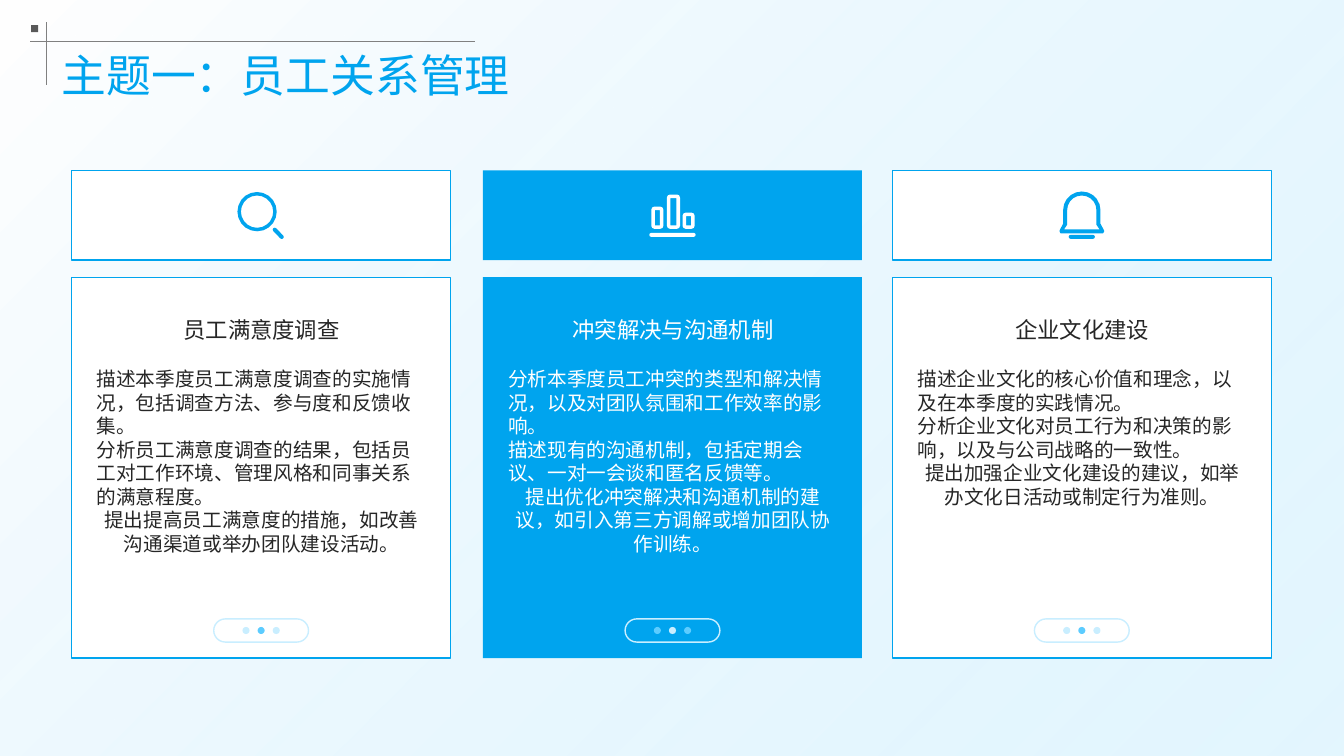
from math import cos, pi, radians, sin

from lxml.etree import SubElement
from pptx import Presentation
from pptx.dml.color import RGBColor
from pptx.enum.shapes import MSO_CONNECTOR, MSO_SHAPE
from pptx.enum.text import MSO_ANCHOR, PP_ALIGN
from pptx.oxml.ns import qn
from pptx.util import Inches, Pt

# Content
TITLE = "主题一：员工关系管理"
TOPICS = [
    {"left": 0.71, "icon": "search", "solid": False, "heading": "员工满意度调查", "points": [
        "描述本季度员工满意度调查的实施情况，包括调查方法、参与度和反馈收集。",
        "分析员工满意度调查的结果，包括员工对工作环境、管理风格和同事关系的满意程度。",
        "提出提高员工满意度的措施，如改善沟通渠道或举办团队建设活动。"]},
    {"left": 4.79, "icon": "bars", "solid": True, "heading": "冲突解决与沟通机制", "points": [
        "分析本季度员工冲突的类型和解决情况，以及对团队氛围和工作效率的影响。",
        "描述现有的沟通机制，包括定期会议、一对一会谈和匿名反馈等。",
        "提出优化冲突解决和沟通机制的建议，如引入第三方调解或增加团队协作训练。"]},
    {"left": 8.85, "icon": "bell", "solid": False, "heading": "企业文化建设", "points": [
        "描述企业文化的核心价值和理念，以及在本季度的实践情况。",
        "分析企业文化对员工行为和决策的影响，以及与公司战略的一致性。",
        "提出加强企业文化建设的建议，如举办文化日活动或制定行为准则。"]},
]

# Style and grid, in inches
FONT = "Noto Sans CJK SC"
COLORS = {"blue": "00A4EE", "sky": "5CCCFF", "pale": "C9EEFF", "white": "FFFFFF",
          "ink": "262626", "rule": "808080", "square": "595959"}
SLIDE_W, SLIDE_H = 13.33, 7.5
CARD_W, PAD, TEXT_W = 3.76, 0.25, 3.27
HEAD_TOP, HEAD_H = 1.69, 0.89
BODY_TOP, BODY_H = 2.75, 3.78
PILL_TOP, PILL_W, PILL_H = 6.14, 0.94, 0.23
DOT, DOT_STEP = 0.07, 0.15

deck = Presentation()
deck.slide_width, deck.slide_height = Inches(SLIDE_W), Inches(SLIDE_H)
slide = deck.slides.add_slide(deck.slide_layouts[6])


def color(name):
    return RGBColor.from_string(COLORS[name])


def paint(shape, fill=None, line=None):
    shape.shadow.inherit = False
    if fill:
        shape.fill.solid()
        shape.fill.fore_color.rgb = color(fill)
    else:
        shape.fill.background()
    if line:
        shape.line.color.rgb = color(line)
        shape.line.width = Pt(1)
    else:
        shape.line.fill.background()


def add_block(kind, left, top, width, height, fill=None, line=None):
    block = slide.shapes.add_shape(kind, *map(Inches, (left, top, width, height)))
    paint(block, fill, line)
    return block


def add_text(paragraphs, left, top, width, height, size, ink,
             aligns=(PP_ALIGN.CENTER,), anchor=MSO_ANCHOR.MIDDLE):
    frame = slide.shapes.add_textbox(*map(Inches, (left, top, width, height))).text_frame
    frame.word_wrap = True
    frame.vertical_anchor = anchor
    frame.margin_left = frame.margin_top = frame.margin_right = frame.margin_bottom = 0
    for index, (words, align) in enumerate(zip(paragraphs, aligns)):
        paragraph = frame.add_paragraph() if index else frame.paragraphs[0]
        paragraph.alignment = align
        # Keep punctuation inside the right edge
        paragraph._p.get_or_add_pPr().set("hangingPunct", "0")
        run = paragraph.add_run()
        run.text = words
        run.font.size, run.font.name = Pt(size), FONT
        run.font.color.rgb = color(ink)
        SubElement(run.font._element, qn("a:ea"), typeface=FONT)


def add_rule(x1, y1, x2, y2):
    rule = slide.shapes.add_connector(MSO_CONNECTOR.STRAIGHT, *map(Inches, (x1, y1, x2, y2)))
    rule.line.color.rgb = color("rule")
    rule.line.width = Pt(0.5)
    SubElement(rule._element.spPr, qn("a:effectLst"))


# Icon outlines, measured from the icon's centre
def arc(cx, cy, radius, start, end, steps):
    angles = [radians(start + (end - start) * i / steps) for i in range(steps + 1)]
    return [(cx + radius * cos(a), cy + radius * sin(a)) for a in angles]


def rounded(cx, cy, width, height, radius, turn=0):
    dx, dy = width / 2 - radius, height / 2 - radius
    corners = [(dx, dy), (-dx, dy), (-dx, -dy), (dx, -dy)]
    if radius:
        steps = 5 if radius > 0.1 else 2
        corners = [p for i, (x, y) in enumerate(corners)
                   for p in arc(x, y, radius, 90 * i, 90 * i + 90, steps)]
    c, s = cos(turn * pi / 180), sin(turn * pi / 180)
    return [(cx + x * c - y * s, cy + x * s + y * c) for x, y in corners]


def ring(cx, cy, width, height, radius, inset=0.035):
    return [rounded(cx, cy, width, height, radius),
            rounded(cx, cy, width - 2 * inset, height - 2 * inset, max(radius - inset, 0))]


def bell_outline(radius, skirt):
    return arc(0, -0.05, radius, 180, 360, 10) + skirt + [(-x, y) for x, y in reversed(skirt)]


ICONS = {
    "search": ring(-0.04, -0.035, 0.39, 0.39, 0.195)
    + [rounded(0.17, 0.18, 0.14, 0.04, 0.02, turn=46)],
    "bars": ring(-0.15, 0.025, 0.12, 0.22, 0.03) + ring(0.01, -0.035, 0.13, 0.34, 0.03)
    + ring(0.16, 0.055, 0.12, 0.16, 0.03) + [rounded(0, 0.195, 0.46, 0.04, 0.02)],
    "bell": [rounded(0, 0.215, 0.26, 0.04, 0.02),
             bell_outline(0.185, [(0.185, 0.085), (0.22, 0.15), (0.22, 0.165), (0.21, 0.18)]),
             bell_outline(0.145, [(0.145, 0.095), (0.175, 0.14)])],
}


def add_icon(contours, cx, cy, fill):
    placed = [[(Inches(cx + x), Inches(cy + y)) for x, y in contour] for contour in contours]
    builder = slide.shapes.build_freeform(*placed[0][0])
    for index, contour in enumerate(placed):
        if index:
            builder.move_to(*contour[0])
        builder.add_line_segments(contour[1:], close=True)
    paint(builder.convert_to_shape(), fill)


# Background
backdrop = add_block(MSO_SHAPE.RECTANGLE, 0, 0, SLIDE_W, SLIDE_H)
backdrop.fill.gradient()
backdrop.fill.gradient_angle = 315
for stop, shade in zip(backdrop.fill.gradient_stops, ("white", "pale")):
    stop.color.rgb = color(shade)
last_stop = list(backdrop._element.spPr.iter(qn("a:srgbClr")))[-1]
SubElement(last_stop, qn("a:alpha"), val="50000")

# Title with its corner rules
add_rule(0.3, 0.41, 4.71, 0.41)
add_rule(0.46, 0.84, 0.46, 0.22)
add_block(MSO_SHAPE.RECTANGLE, 0.31, 0.25, 0.07, 0.07, "square")
add_text([TITLE], 0.61, 0.51, 12.04, 0.47, 32, "blue", aligns=[PP_ALIGN.LEFT])

# Topic cards
for topic in TOPICS:
    left, solid = topic["left"], topic["solid"]
    middle = left + CARD_W / 2
    fill, line, ink = ("blue", None, "white") if solid else ("white", "blue", "ink")
    for top, height in ((BODY_TOP, BODY_H), (HEAD_TOP, HEAD_H)):
        add_block(MSO_SHAPE.RECTANGLE, left, top, CARD_W, height, fill, line)
    add_icon(ICONS[topic["icon"]], middle, HEAD_TOP + HEAD_H / 2, "white" if solid else "blue")

    add_text([topic["heading"]], left + PAD, 2.97, TEXT_W, 0.6, 16, ink)
    add_text(topic["points"], left + PAD, 3.64, TEXT_W, 2.41, 14, ink,
             aligns=[PP_ALIGN.LEFT, PP_ALIGN.LEFT, PP_ALIGN.CENTER], anchor=MSO_ANCHOR.TOP)

    # Pill with three dots
    pill = add_block(MSO_SHAPE.ROUNDED_RECTANGLE, middle - PILL_W / 2, PILL_TOP,
                     PILL_W, PILL_H, line="pale")
    pill.adjustments[0] = 0.5
    for place in (-1, 0, 1):
        bright = (place == 0) != solid
        add_block(MSO_SHAPE.OVAL, middle + place * DOT_STEP - DOT / 2,
                  PILL_TOP + (PILL_H - DOT) / 2, DOT, DOT, "sky" if bright else "pale")

deck.save("out.pptx")
